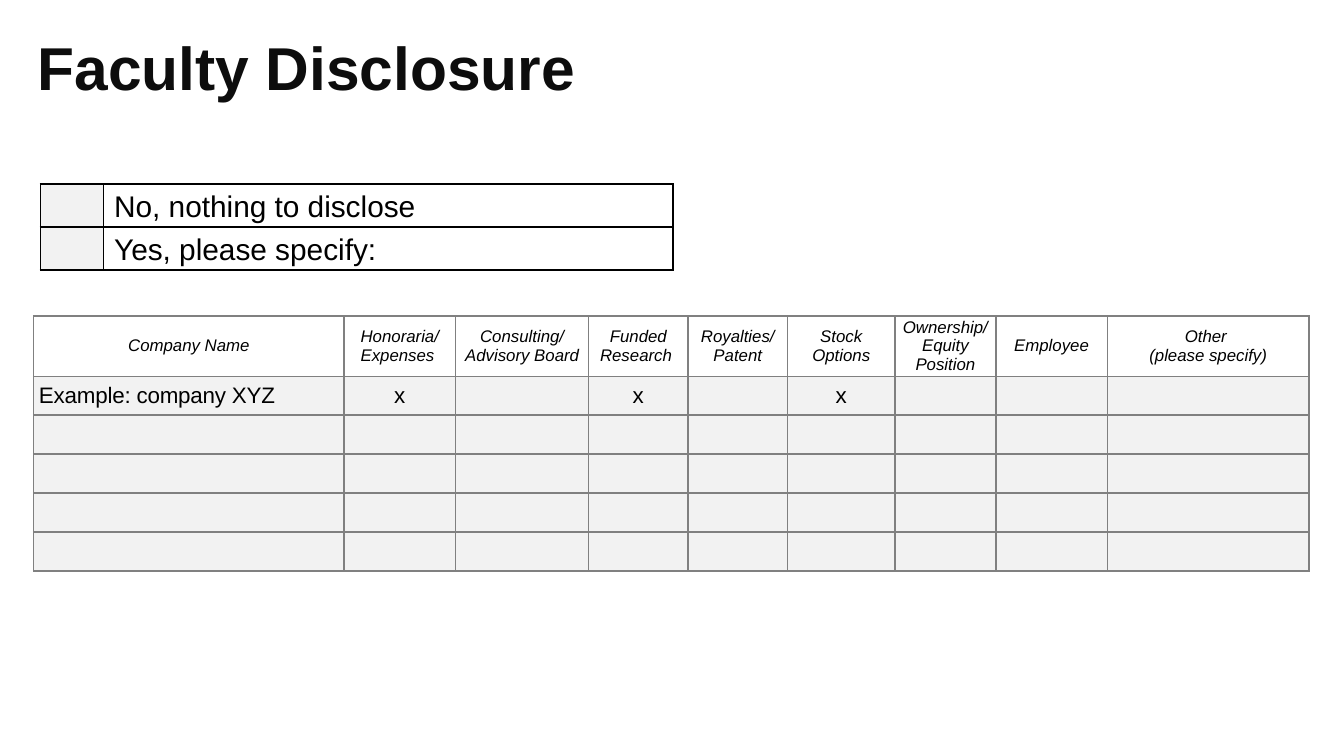
from dataclasses import dataclass

from lxml.etree import SubElement
from pptx import Presentation
from pptx.dml.color import RGBColor
from pptx.enum.text import MSO_ANCHOR as Anchor, PP_ALIGN as Align
from pptx.oxml.ns import qn
from pptx.util import Inches, Pt


@dataclass(frozen=True)
class Theme:
    font: str = "Arial"
    title: str = "0D0D0D"
    text: str = "000000"
    answer_fill: str = "F2F2F2"
    grid: str = "808080"
    frame: str = "000000"
    title_size: float = 32.4
    choice_size: float = 16
    header_size: float = 9
    body_size: float = 12


@dataclass(frozen=True)
class CellStyle:
    size: float
    margins: tuple[float, float, float, float]
    fill: str | None = None
    align: Align = Align.LEFT
    anchor: Anchor = Anchor.MIDDLE
    italic: bool = False
    line_spacing: float | None = None
    tracking: float = 0


@dataclass(frozen=True)
class Grid:
    left: float
    top: float
    columns: list[float]
    rows: list[float]
    border: str


THEME = Theme()
NARROW = (0.04, 0, 0.04, 0)
HEADER = CellStyle(THEME.header_size, NARROW, align=Align.CENTER, italic=True)
COMPANY = CellStyle(THEME.body_size, NARROW, THEME.answer_fill, tracking=-0.1)
MARK = CellStyle(THEME.body_size, NARROW, THEME.answer_fill, Align.CENTER)
CHOICE = CellStyle(THEME.choice_size, (0.08, 0.01, 0.08, 0),
                   anchor=Anchor.TOP, line_spacing=1.15)

HEADINGS = ["Company Name", "Honoraria/\nExpenses ", "Consulting/ Advisory Board",
            "Funded Research ", "Royalties/ Patent", "Stock Options",
            "Ownership/ Equity Position", "Employee", "Other \n(please specify)"]
EXAMPLE = ["Example: company XYZ ", "x", "", "x", "", "x", "", "", ""]
CHOICES = ["No, nothing to disclose", "Yes, please specify:"]
BLANK_ROWS = 4


def set_all(target, values: dict) -> None:
    for name, value in values.items():
        setattr(target, name, value)


def set_font(font, size: float, color: str, **extra) -> None:
    set_all(font, {"name": THEME.font, "size": Pt(size), **extra})
    font.color.rgb = RGBColor.from_string(color)


def set_borders(cell, color: str) -> None:
    """Give all four sides a 1 pt line, placed before the fill as the schema asks."""
    tc_pr = cell._tc.get_or_add_tcPr()
    for i, side in enumerate(("a:lnL", "a:lnR", "a:lnT", "a:lnB")):
        line = SubElement(tc_pr, qn(side), w=str(Pt(1)))
        SubElement(SubElement(line, qn("a:solidFill")), qn("a:srgbClr"), val=color)
        tc_pr.insert(i, line)


def fill_cell(cell, text: str, style: CellStyle, border: str) -> None:
    left, top, right, bottom = map(Inches, style.margins)
    set_all(cell, {"margin_left": left, "margin_top": top, "margin_right": right,
                   "margin_bottom": bottom, "vertical_anchor": style.anchor})
    if style.fill:
        cell.fill.solid()
        cell.fill.fore_color.rgb = RGBColor.from_string(style.fill)
    else:
        cell.fill.background()
    set_borders(cell, border)

    tf = cell.text_frame
    tf.text = text
    for p in tf.paragraphs:
        set_all(p, {"alignment": style.align, "line_spacing": style.line_spacing})
        for r in p.runs:
            set_font(r.font, style.size, THEME.text, italic=style.italic)
            if style.tracking:
                r._r.get_or_add_rPr().set("spc", str(round(style.tracking * 100)))
        if not p.runs:  # keeps an empty row from growing to the default size
            SubElement(p._p, qn("a:endParaRPr"), sz=str(int(style.size * 100)))


def add_grid(slide, grid: Grid, cells: list[list[tuple[str, CellStyle]]]) -> None:
    frame = slide.shapes.add_table(
        len(grid.rows), len(grid.columns), Inches(grid.left), Inches(grid.top),
        Inches(sum(grid.columns)), Inches(sum(grid.rows)))
    table = frame.table
    set_all(table, {"first_row": False, "horz_banding": False})
    for column, width in zip(table.columns, grid.columns):
        column.width = Inches(width)
    for row, height, contents in zip(table.rows, grid.rows, cells):
        row.height = Inches(height)
        for cell, (text, style) in zip(row.cells, contents):
            fill_cell(cell, text, style, grid.border)


def add_title(slide, text: str) -> None:
    title = slide.shapes.title
    set_all(title, {"left": Inches(0.18), "top": Inches(0.16),
                    "width": Inches(7.7), "height": Inches(0.66)})
    tf = title.text_frame
    tf.text = text
    set_all(tf, {"vertical_anchor": Anchor.MIDDLE, "word_wrap": True})
    p = tf.paragraphs[0]
    p.alignment = Align.LEFT
    set_font(p.runs[0].font, THEME.title_size, THEME.title, bold=True)


def main() -> None:
    prs = Presentation()
    width = Inches(10)
    set_all(prs, {"slide_width": width, "slide_height": width * 9 // 16})
    slide = prs.slides.add_slide(prs.slide_layouts[5])
    add_title(slide, "Faculty Disclosure")

    answers = [EXAMPLE] + [[""] * len(HEADINGS)] * BLANK_ROWS
    interests = Grid(0.25, 2.35, [2.31, 0.83, 0.99, 0.74, 0.74, 0.8, 0.75, 0.83, 1.5],
                     [0.45] + [0.29] * len(answers), THEME.grid)
    add_grid(slide, interests,
             [[(text, HEADER) for text in HEADINGS]]
             + [[(company, COMPANY)] + [(mark, MARK) for mark in marks]
                for company, *marks in answers])

    choices = Grid(0.3, 1.37, [0.47, 4.24], [0.32] * len(CHOICES), THEME.frame)
    add_grid(slide, choices, [[("", MARK), (text, CHOICE)] for text in CHOICES])
    prs.save("out.pptx")


if __name__ == "__main__":
    main()
